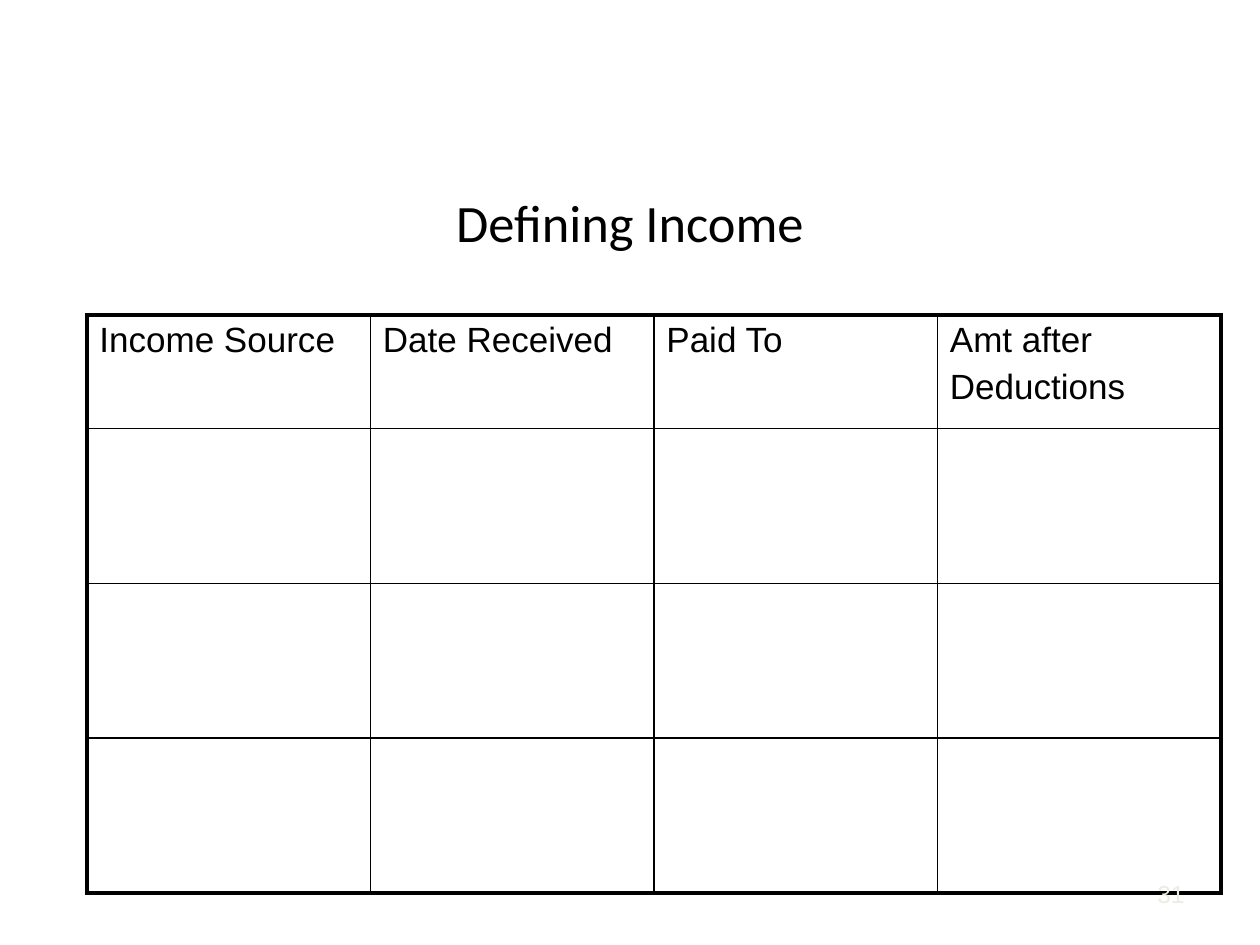
import pptx
import pptx.util
import pptx.dml.color
import pptx.enum.text
import pptx.oxml
import pptx.oxml.ns
from pptx.util import Cm

HEADS = ["Income Source", "Date Received", "Paid To", "Amt after\nDeductions"]
ROWS = [2.29, 3.12, 3.12, 3.12]
THIN, THICK = 1, 2.25


def style(para, size, face, color, align):
    """Set the font and alignment of a paragraph."""
    font = para.font
    font.size = pptx.util.Pt(size)
    font.name = face
    font.color.rgb = pptx.dml.color.RGBColor.from_string(color)
    para.alignment = align


def edge(cell, side, width):
    """Draw one black border of a cell."""
    space = pptx.oxml.ns.nsdecls("a")
    line = pptx.oxml.parse_xml(
        f'<a:ln{side} {space} w="{int(pptx.util.Pt(width))}">'
        '<a:solidFill><a:srgbClr val="000000"/></a:solidFill>'
        f'</a:ln{side}>')
    cell._tc.get_or_add_tcPr().append(line)


def add_title(slide, text):
    """Place and format the slide title."""
    title = slide.shapes.title
    title.left, title.top, title.width, title.height = (
        Cm(1.27), Cm(2.87), Cm(22.86), Cm(3.18))
    frame = title.text_frame
    frame.text = text
    frame.vertical_anchor = pptx.enum.text.MSO_ANCHOR.MIDDLE
    style(frame.paragraphs[0], 30, "Calibri", "000000",
          pptx.enum.text.PP_ALIGN.CENTER)


def add_grid(slide):
    """Add the income table with a thick outer frame."""
    rows, cols = len(ROWS), len(HEADS)
    table = slide.shapes.add_table(
        rows, cols, Cm(1.75), Cm(6.35), Cm(22.86), Cm(sum(ROWS))).table
    table.first_row = table.horz_banding = False
    for row, height in enumerate(ROWS):
        table.rows[row].height = Cm(height)
        for col in range(cols):
            cell = table.cell(row, col)
            outer = {"L": col == 0, "R": col == cols - 1,
                     "T": row == 0, "B": row == rows - 1}
            for side, thick in outer.items():
                edge(cell, side, THICK if thick else THIN)
            cell.fill.background()
    for col, head in enumerate(HEADS):
        frame = table.cell(0, col).text_frame
        frame.text = head
        for rank, para in enumerate(frame.paragraphs):
            style(para, 20, "Arial", "000000", pptx.enum.text.PP_ALIGN.LEFT)
            if rank:
                para.space_before = pptx.util.Pt(4)


def add_number(slide, text):
    """Add the page number at the lower right."""
    box = slide.shapes.add_textbox(Cm(18.21), Cm(17.35), Cm(5.92), Cm(1.32))
    frame = box.text_frame
    frame.word_wrap = True
    frame.vertical_anchor = pptx.enum.text.MSO_ANCHOR.MIDDLE
    frame.text = text
    style(frame.paragraphs[0], 14, "Arial", "EEECE1",
          pptx.enum.text.PP_ALIGN.RIGHT)


def main():
    """Build and save the slide."""
    deck = pptx.Presentation()
    deck.slide_width, deck.slide_height = Cm(25.4), Cm(19.05)
    slide = deck.slides.add_slide(deck.slide_layouts[5])
    add_title(slide, "Defining Income")
    add_grid(slide)
    add_number(slide, "31")
    deck.save("out.pptx")


if __name__ == "__main__":
    main()
